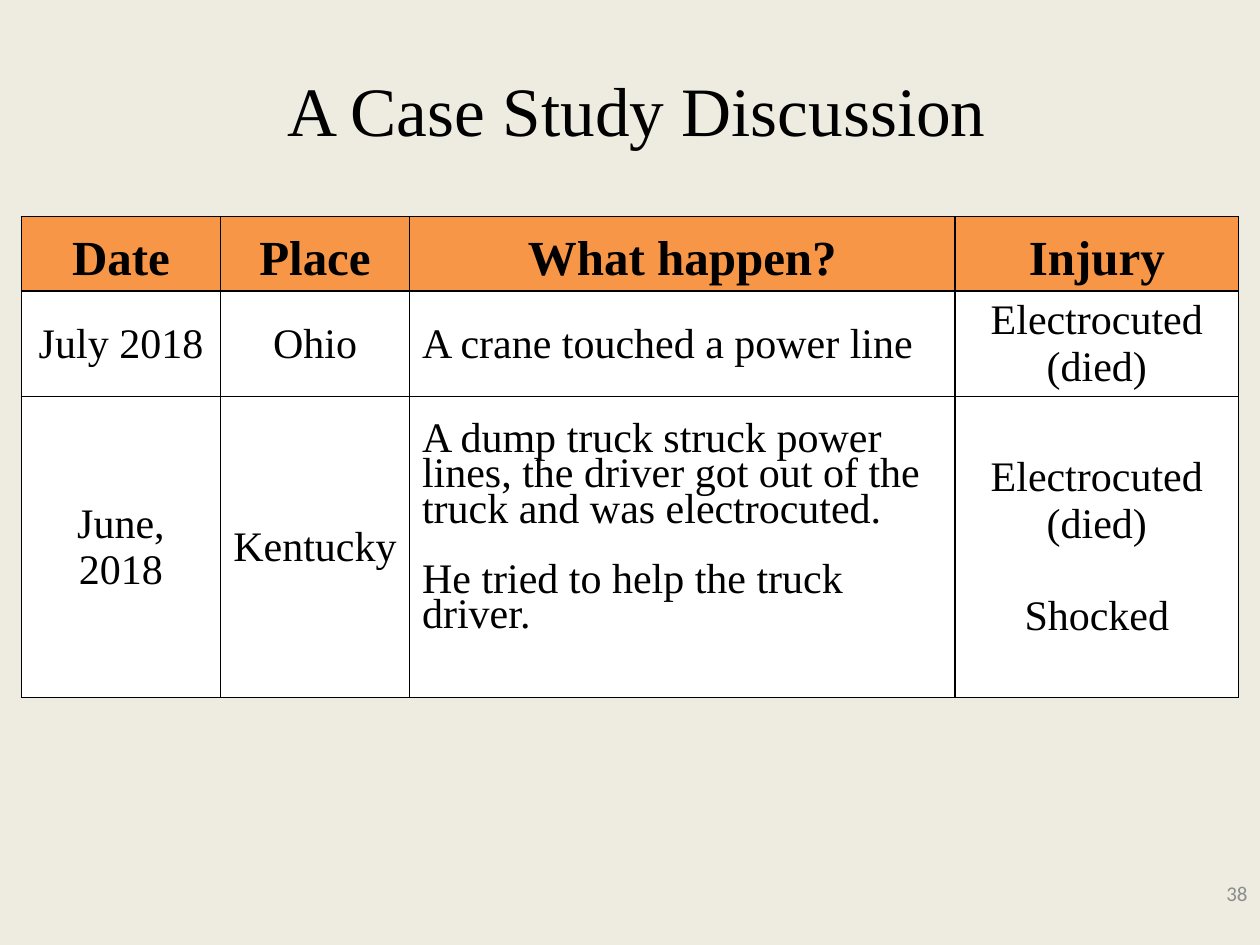
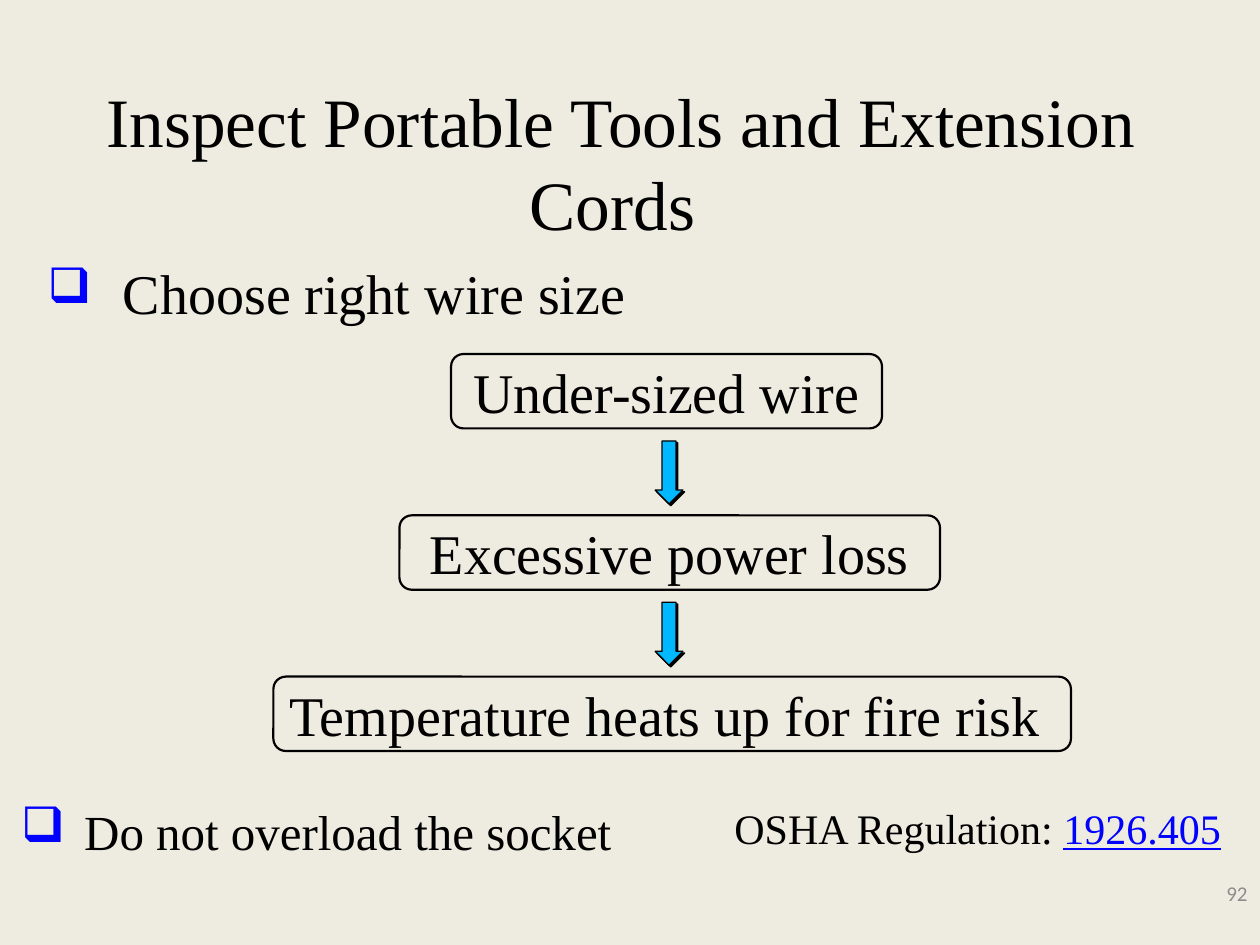
from dataclasses import dataclass

from lxml import etree
from pptx import Presentation
from pptx import util as u
from pptx.dml.color import RGBColor
from pptx.enum import shapes, text
from pptx.oxml.ns import qn

PX = 9144
CENTER, LEFT = text.PP_ALIGN.CENTER, text.PP_ALIGN.LEFT
RIGHT, JUSTIFY = text.PP_ALIGN.RIGHT, text.PP_ALIGN.JUSTIFY
MIDDLE, TOP = text.MSO_ANCHOR.MIDDLE, text.MSO_ANCHOR.TOP


@dataclass(frozen=True)
class Theme:
    background: str = "EEECE1"
    ink: str = "000000"
    muted: str = "8C8C8C"
    accent: str = "0000FF"
    header: str = "F79646"
    cell: str = "FFFFFF"
    arrow: str = "00B8FF"
    font: str = "Times New Roman"
    number_font: str = "Calibri"
    title_size: float = 39.6
    step_size: int = 32
    heading_size: int = 28
    body_size: int = 24
    number_size: int = 12


@dataclass(frozen=True)
class Box:
    left: int
    top: int
    width: int
    height: int

    def emu(self) -> tuple:
        return px(self.left), px(self.top), px(self.width), px(self.height)


@dataclass(frozen=True)
class Run:
    text: str
    size: float | None = None
    color: str | None = None
    underline: bool | None = None


@dataclass(frozen=True)
class Entry:
    paragraphs: tuple
    align: text.PP_ALIGN = CENTER
    size: int = 24
    bold: bool = False
    fill: str = "FFFFFF"
    line_spacing: float | None = None
    gap: float = 0
    inset_top: int = 5
    inset_bottom: int = 5


@dataclass(frozen=True)
class Step:
    label: str
    left: int
    width: int


THEME = Theme()


def px(length: int) -> u.Emu:
    return u.Emu(length * PX)


def rgb(color: str) -> RGBColor:
    return RGBColor.from_string(color)


def add_bullet(paragraph, color: str, indent: int) -> None:
    properties = paragraph._p.get_or_add_pPr()
    properties.set("marL", str(px(indent)))
    properties.set("indent", str(-px(indent)))
    bullet_color = etree.SubElement(properties, qn("a:buClr"))
    etree.SubElement(bullet_color, qn("a:srgbClr"), val=color)
    etree.SubElement(properties, qn("a:buChar"), char="❑")


def write(frame, *paragraphs, size: float, color: str = THEME.ink, font: str = THEME.font,
          bold: bool = False, align=LEFT, anchor=None, line_spacing: float | None = None,
          gap: float = 0, bullet: bool = False) -> None:
    if anchor is not None:
        frame.word_wrap = True
        frame.auto_size = text.MSO_AUTO_SIZE.NONE
        frame.vertical_anchor = anchor
    for index, content in enumerate(paragraphs):
        paragraph = frame.add_paragraph() if index else frame.paragraphs[0]
        paragraph.alignment = align
        if line_spacing:
            paragraph.line_spacing = line_spacing
        if index and gap:
            paragraph.space_before = u.Pt(gap)
        if bullet:
            add_bullet(paragraph, THEME.accent, 50)
        for part in (Run(content),) if isinstance(content, str) else content:
            run = paragraph.add_run()
            run.text = part.text
            run.font.name = font
            run.font.size = u.Pt(part.size or size)
            run.font.bold = bold
            run.font.underline = part.underline
            run.font.color.rgb = rgb(part.color or color)


def add_text(slide, box: Box, *paragraphs, anchor=TOP, **style) -> None:
    shape = slide.shapes.add_textbox(*box.emu())
    write(shape.text_frame, *paragraphs, anchor=anchor, **style)


def add_titled_slide(presentation, title: str, box: Box, number: int):
    slide = presentation.slides.add_slide(presentation.slide_layouts[5])
    shape = slide.shapes.title
    shape.left, shape.top, shape.width, shape.height = box.emu()
    write(shape.text_frame, title, size=THEME.title_size, align=CENTER, anchor=MIDDLE)
    add_text(slide, Box(775, 689, 225, 40), str(number), size=THEME.number_size,
             color=THEME.muted, font=THEME.number_font, align=RIGHT, anchor=MIDDLE)
    return slide


def add_borders(cell) -> None:
    properties = cell._tc.get_or_add_tcPr()
    for index, side in enumerate(("a:lnL", "a:lnR", "a:lnT", "a:lnB")):
        line = etree.Element(qn(side), w=str(u.Pt(1)))
        fill = etree.SubElement(line, qn("a:solidFill"))
        etree.SubElement(fill, qn("a:srgbClr"), val=THEME.ink)
        properties.insert(index, line)


def fill_cell(cell, entry: Entry) -> None:
    cell.fill.solid()
    cell.fill.fore_color.rgb = rgb(entry.fill)
    cell.vertical_anchor = MIDDLE
    cell.margin_left = cell.margin_right = px(10)
    cell.margin_top, cell.margin_bottom = px(entry.inset_top), px(entry.inset_bottom)
    write(cell.text_frame, *entry.paragraphs, size=entry.size, bold=entry.bold,
          align=entry.align, line_spacing=entry.line_spacing, gap=entry.gap)
    add_borders(cell)


def add_table(slide, left: int, top: int, widths: tuple, heights: tuple, rows: tuple) -> None:
    box = Box(left, top, sum(widths), sum(heights))
    table = slide.shapes.add_table(len(heights), len(widths), *box.emu()).table
    table.first_row = table.horz_banding = False
    for column, width in zip(table.columns, widths):
        column.width = px(width)
    for row, height, entries in zip(table.rows, heights, rows):
        row.height = px(height)
        for cell, entry in zip(row.cells, entries):
            fill_cell(cell, entry)


def add_shape(slide, kind, box: Box, line_width: float, fill: str | None = None):
    shape = slide.shapes.add_shape(kind, *box.emu())
    shape.shadow.inherit = False
    if fill:
        shape.fill.solid()
        shape.fill.fore_color.rgb = rgb(fill)
    else:
        shape.fill.background()
    shape.line.color.rgb = rgb(THEME.ink)
    shape.line.width = u.Pt(line_width)
    return shape


def add_step(slide, step: Step, top: int) -> None:
    box = Box(step.left, top, step.width, 59)
    shape = add_shape(slide, shapes.MSO_SHAPE.ROUNDED_RECTANGLE, box, 1.25)
    write(shape.text_frame, step.label, size=THEME.step_size, align=CENTER, anchor=MIDDLE)


def add_down_arrow(slide, top: int) -> None:
    box = Box(520, top, 22, 50)
    shape = add_shape(slide, shapes.MSO_SHAPE.DOWN_ARROW, box, 0.75, THEME.arrow)
    effects = shape._element.spPr.find(qn("a:effectLst"))
    shadow = etree.SubElement(effects, qn("a:outerShdw"), dist=str(u.Pt(1.4)),
                              dir=str(45 * 60000), algn="ctr", rotWithShape="0")
    etree.SubElement(shadow, qn("a:srgbClr"), val=THEME.ink)


def build_case_study(presentation) -> None:
    slide = add_titled_slide(presentation, " A Case Study Discussion", Box(50, 55, 900, 62), 38)
    headings = tuple(
        Entry((label,), size=THEME.heading_size, bold=True, fill=THEME.header,
              line_spacing=0.76, inset_top=19)
        for label in ("Date", "Place", "What happen?", "Injury"))
    ohio = (Entry(("July 2018",)), Entry(("Ohio",)),
            Entry(("A crane touched a power line",), align=LEFT),
            Entry(("Electrocuted (died)",)))
    kentucky = (
        Entry(("June, 2018",)), Entry(("Kentucky",)),
        Entry(("A dump truck struck power lines, the driver got out of the truck "
               "and was electrocuted.", "He tried to help the truck driver."),
              align=LEFT, line_spacing=0.76, gap=20, inset_bottom=32),
        Entry(("Electrocuted (died)", "Shocked"), gap=26.5))
    add_table(slide, 17, 172, (158, 150, 433, 225), (59, 83, 239), (headings, ohio, kentucky))


def build_cord_inspection(presentation) -> None:
    slide = add_titled_slide(presentation, "Inspect Portable Tools and Extension Cords ",
                             Box(11, 97, 964, 62), 92)
    add_text(slide, Box(28, 200, 485, 64),
             (Run(" ", THEME.heading_size), Run("Choose right wire size")),
             size=THEME.step_size, bullet=True)
    steps = (Step("Under-sized wire", 358, 342),
             Step("Excessive power loss", 317, 429),
             Step("Temperature heats up for fire risk ", 217, 633))
    for index, step in enumerate(steps):
        top = 281 + 128 * index
        add_step(slide, step, top)
        if index < len(steps) - 1:
            add_down_arrow(slide, top + 69)
    add_text(slide, Box(573, 632, 412, 50),
             (Run("OSHA Regulation: "), Run("1926.405", color=THEME.accent, underline=True)),
             size=THEME.body_size)
    add_text(slide, Box(7, 631, 513, 57), "Do not overload the socket",
             size=THEME.heading_size, align=JUSTIFY, bullet=True)


def main() -> None:
    presentation = Presentation()
    presentation.slide_width, presentation.slide_height = px(1000), px(750)
    background = presentation.slide_master.background.fill
    background.solid()
    background.fore_color.rgb = rgb(THEME.background)
    build_case_study(presentation)
    build_cord_inspection(presentation)
    presentation.save("out.pptx")


if __name__ == "__main__":
    main()
